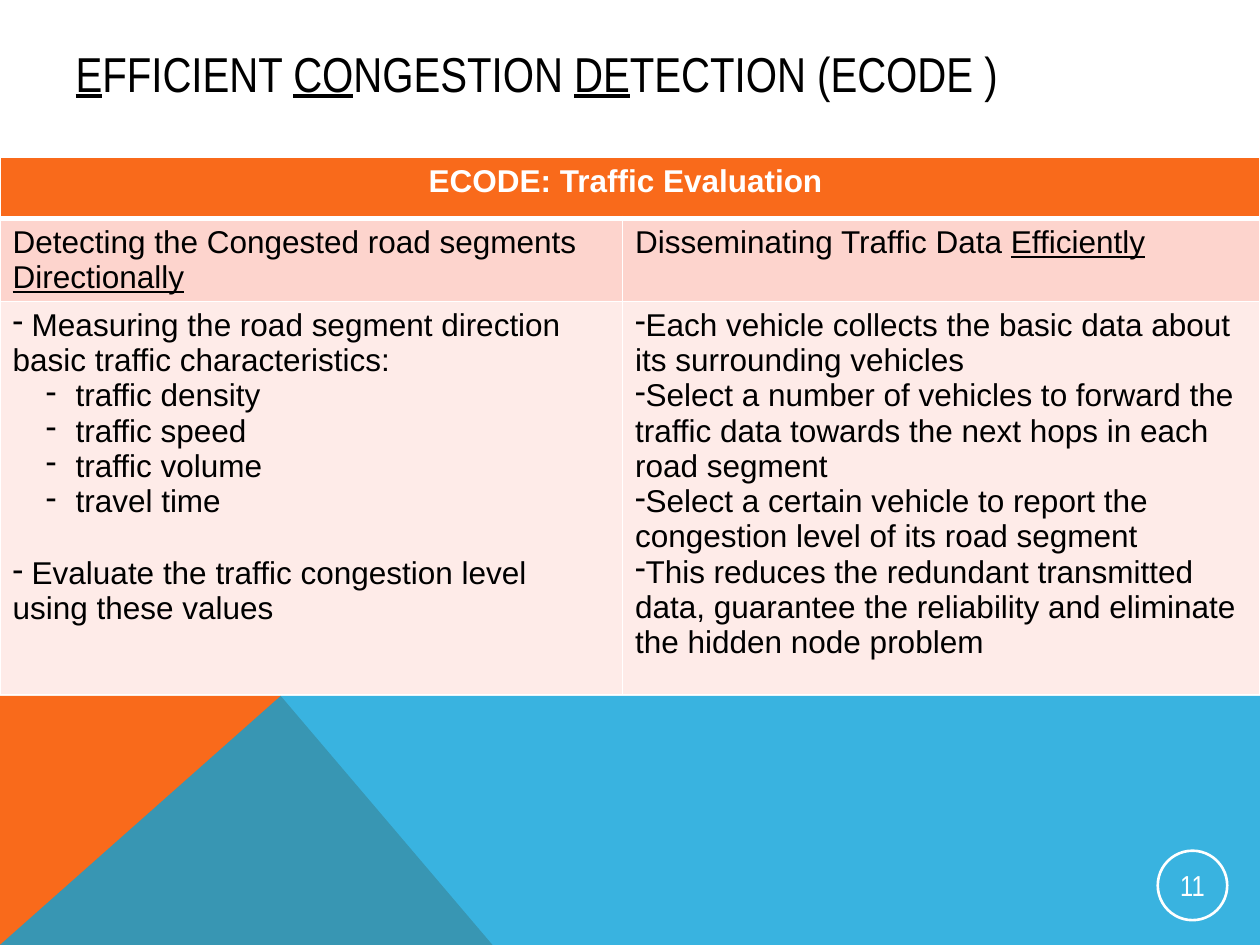
from dataclasses import dataclass

from lxml.etree import SubElement
from pptx import Presentation
from pptx.dml.color import RGBColor
from pptx.enum.shapes import MSO_SHAPE as Shape
from pptx.enum.text import MSO_ANCHOR as Anchor, MSO_AUTO_SIZE as AutoSize, PP_ALIGN as Align
from pptx.oxml import parse_xml
from pptx.oxml.ns import nsdecls, qn
from pptx.util import Cm, Pt


@dataclass(frozen=True)
class Theme:
    orange: str = "F96A1B"
    blue: str = "08A1D9"
    white: str = "FFFFFF"
    black: str = "000000"
    row_fills: tuple = ("F96A1B", "FDD4CD", "FEEBE8")
    heading_font: str = "Arial Narrow"
    body_font: str = "Arial"
    title_size: float = 28
    body_size: float = 18
    number_size: float = 16.5


@dataclass
class Item:
    """One paragraph; words between underscores are underlined."""
    text: str
    bullet: bool = False
    level: int = 0
    space_before: float = 0


class SlideBuilder:
    def __init__(self, slide, theme):
        self.slide = slide
        self.theme = theme

    def fill_paragraph(self, paragraph, item, font, size, color, align=Align.LEFT, bold=False):
        paragraph.alignment = align
        paragraph.level = item.level
        paragraph.space_before = Pt(item.space_before)
        if item.bullet:
            properties = paragraph._p.get_or_add_pPr()
            properties.set("marL", str(Cm(1.27 * item.level)))
            properties.set("indent", str(Cm(-0.6 * item.level)))
            SubElement(properties, qn("a:buChar")).set("char", "-")
        paragraph.font.name, paragraph.font.size = font, Pt(size)
        paragraph.font.bold = bold
        paragraph.font.color.rgb = RGBColor.from_string(color)
        for index, part in enumerate(item.text.split("_")):
            if part:
                run = paragraph.add_run()
                run.text = part
                if index % 2:
                    run.font.underline = True

    def title(self, text, left, top, width, height):
        shape = self.slide.shapes.title
        shape.left, shape.top = Cm(left), Cm(top)
        shape.width, shape.height = Cm(width), Cm(height)
        frame = shape.text_frame
        frame.vertical_anchor = Anchor.MIDDLE
        frame.auto_size = AutoSize.NONE
        theme = self.theme
        self.fill_paragraph(frame.paragraphs[0], Item(text), theme.heading_font,
                            theme.title_size, theme.black)

    def polygon(self, points, color, opacity=100):
        corners = [(Cm(x), Cm(y)) for x, y in points]
        builder = self.slide.shapes.build_freeform(*corners[0])
        builder.add_line_segments(corners[1:], close=True)
        shape = builder.convert_to_shape()
        shape.shadow.inherit = False
        shape.line.fill.background()
        shape.fill.solid()
        shape.fill.fore_color.rgb = RGBColor.from_string(color)
        if opacity < 100:
            color_node = shape._element.spPr.find(".//" + qn("a:srgbClr"))
            SubElement(color_node, qn("a:alpha")).set("val", str(opacity * 1000))

    def borders(self, cell, top, bottom):
        properties = cell._tc.get_or_add_tcPr()
        widths = {"lnL": 1, "lnR": 1, "lnT": top, "lnB": bottom}
        for index, (tag, width) in enumerate(widths.items()):
            properties.insert(index, parse_xml(
                f'<a:{tag} {nsdecls("a")} w="{Pt(width)}"><a:solidFill>'
                f'<a:srgbClr val="{self.theme.white}"/></a:solidFill></a:{tag}>'))

    def table(self, rows, left, top, column_widths, row_heights):
        theme = self.theme
        table = self.slide.shapes.add_table(
            len(rows), len(column_widths), Cm(left), Cm(top),
            Cm(sum(column_widths)), Cm(sum(row_heights))).table
        table.first_row = table.horz_banding = False
        for column, width in zip(table.columns, column_widths):
            column.width = Cm(width)
        for row, height in zip(table.rows, row_heights):
            row.height = Cm(height)
        table.cell(0, 0).merge(table.cell(0, len(column_widths) - 1))

        for r, row in enumerate(rows):
            header = r == 0
            for c in range(len(column_widths)):
                cell = table.cell(r, c)
                cell.fill.solid()
                cell.fill.fore_color.rgb = RGBColor.from_string(theme.row_fills[r])
                self.borders(cell, top=3 if r == 1 else 1, bottom=3 if header else 1)
                frame = cell.text_frame
                for index, item in enumerate(row[c] if c < len(row) else []):
                    paragraph = frame.add_paragraph() if index else frame.paragraphs[0]
                    self.fill_paragraph(paragraph, item, theme.body_font, theme.body_size,
                                        theme.white if header else theme.black,
                                        Align.CENTER if header else Align.LEFT, header)

    def page_number(self, number, left, top, size):
        theme = self.theme
        shape = self.slide.shapes.add_shape(Shape.OVAL, Cm(left), Cm(top), Cm(size), Cm(size))
        shape.shadow.inherit = False
        shape.fill.background()
        shape.line.color.rgb = RGBColor.from_string(theme.white)
        shape.line.width = Pt(1.5)
        frame = shape.text_frame
        frame.margin_left = frame.margin_right = Cm(0.03)
        frame.margin_top = frame.margin_bottom = Cm(0.03)
        frame.vertical_anchor = Anchor.MIDDLE
        self.fill_paragraph(frame.paragraphs[0], Item(number), theme.heading_font,
                            theme.number_size, theme.white, Align.CENTER)


MEASURES = ["traffic density", "traffic speed", "traffic volume", "travel time"]
DISSEMINATION = [
    "Each vehicle collects the basic data about its surrounding vehicles",
    "Select a number of vehicles to forward the traffic data towards the next hops "
    "in each road segment",
    "Select a certain vehicle to report the congestion level of its road segment",
    "This reduces the redundant transmitted data, guarantee the reliability and "
    "eliminate the hidden node problem",
]
ROWS = [
    [[Item("ECODE: Traffic Evaluation ")]],
    [[Item("Detecting the Congested road segments _Directionally_")],
     [Item("Disseminating Traffic Data _Efficiently_")]],
    [[Item(" Measuring the road segment direction basic traffic characteristics:", True),
      *(Item(measure, True, level=1) for measure in MEASURES),
      Item(" Evaluate the traffic congestion level using these values", True,
           space_before=21)],
     [Item(text, True) for text in DISSEMINATION]],
]


def main():
    presentation = Presentation()
    width, height = 25.4, 19.05
    presentation.slide_width, presentation.slide_height = Cm(width), Cm(height)
    slide = presentation.slides.add_slide(presentation.slide_layouts[5])
    builder = SlideBuilder(slide, Theme())

    # Coloured footer bands meeting at the peak
    band_top, peak = 14.03, 5.66
    builder.polygon([(0, height), (0, band_top), (peak, band_top), (9.93, height)],
                    builder.theme.orange)
    builder.polygon([(0, height), (peak, band_top), (width, band_top), (width, height)],
                    builder.theme.blue, opacity=80)

    # Title
    builder.title("_E_FFICIENT _CO_NGESTION _DE_TECTION (ECODE )", 1.27, 0.2, 22.86, 2.54)

    # Traffic evaluation table
    builder.table(ROWS, 0, 3.18, [12.55, 12.85], [1.22, 1.22, 7.92])

    # Page number
    builder.page_number("11", 23.34, 17.15, 1.4)

    presentation.save("out.pptx")


if __name__ == "__main__":
    main()
